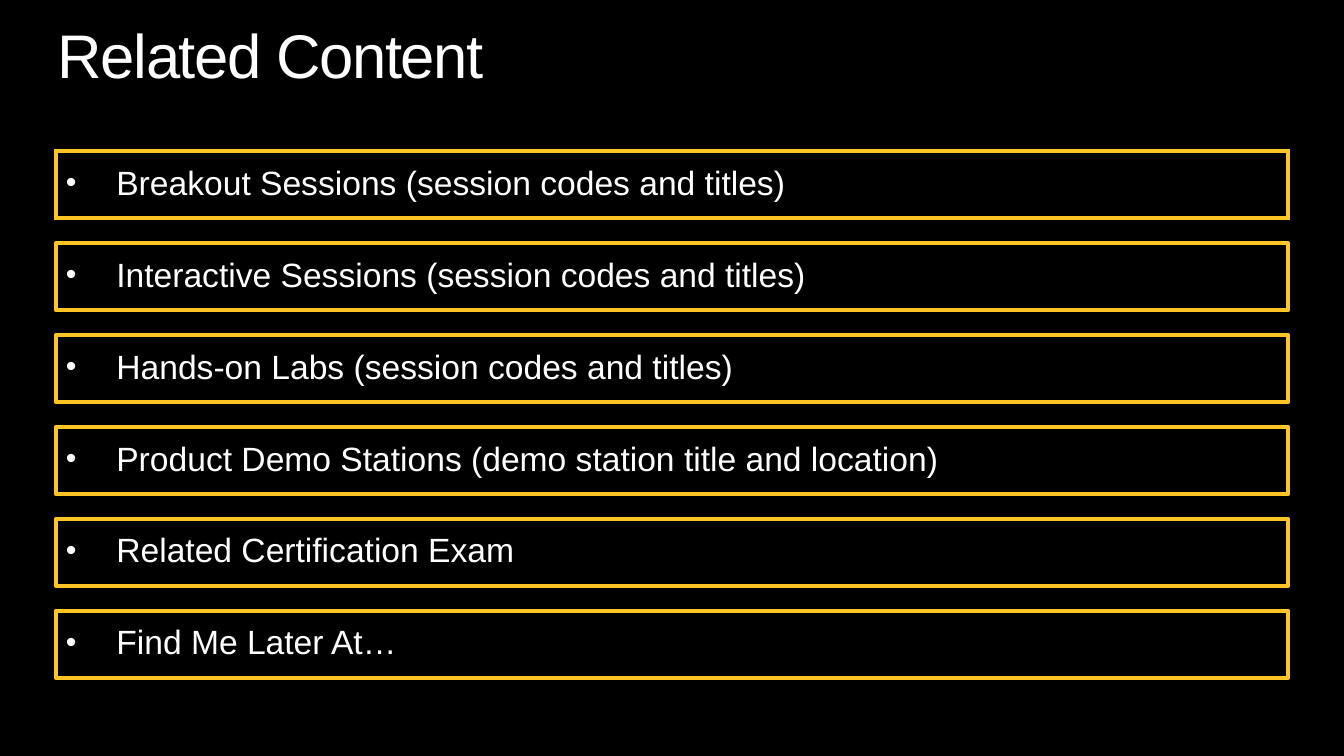
from lxml import etree
from pptx import Presentation
from pptx.dml.color import RGBColor
from pptx.enum.shapes import MSO_SHAPE
from pptx.enum.text import MSO_ANCHOR, PP_ALIGN
from pptx.oxml.ns import qn
from pptx.util import Inches, Pt

RECT = MSO_SHAPE.RECTANGLE
TOP = MSO_ANCHOR.TOP
LEFT = PP_ALIGN.LEFT
BLACK = RGBColor(0x00, 0x00, 0x00)
WHITE = RGBColor(0xFF, 0xFF, 0xFF)
GOLD = RGBColor(0xFF, 0xC4, 0x25)

COLS, ROWS = 24, 45
FIRST, PITCH = 9, 5.47
TOPICS = [
    "Breakout Sessions (session codes and titles)",
    "Interactive Sessions (session codes and titles)",
    "Hands-on Labs (session codes and titles)",
    "Product Demo Stations (demo station title and location)",
    "Related Certification Exam",
    "Find Me Later At…",
]


def assign(target, values):
    for name, value in values.items():
        setattr(target, name, value)


class Deck:
    font = {"name": "Arial"}
    color = WHITE

    def __init__(self):
        self.prs = Presentation()
        assign(self.prs, {"slide_width": Inches(13.33), "slide_height": Inches(7.5)})
        self.slide = self.prs.slides.add_slide(self.prs.slide_layouts[6])
        fill = self.slide.background.fill
        fill.solid()
        fill.fore_color.rgb = BLACK

    def place(self, col, row, wide, high):
        x = self.prs.slide_width / COLS
        y = self.prs.slide_height / ROWS
        return [round(n) for n in (col * x, row * y, wide * x, high * y)]

    def label(self, shape, text, size, side=0, edge=0, bullet=False):
        frame = shape.text_frame
        assign(frame, {
            "word_wrap": True, "vertical_anchor": TOP,
            "margin_left": Inches(side), "margin_right": Inches(side),
            "margin_top": Inches(edge), "margin_bottom": Inches(edge),
        })
        para = frame.paragraphs[0]
        assign(para, {"alignment": LEFT, "line_spacing": 0.9})
        if bullet:
            self.bullet(para)
        run = para.add_run()
        run.text = text
        assign(run.font, {**self.font, "size": Pt(size)})
        run.font.color.rgb = self.color
        return run

    def bullet(self, para):
        props = para._p.get_or_add_pPr()
        props.set("marL", str(Inches(0.5)))
        props.set("indent", str(Inches(-0.5)))
        for tag, key, value in (
            ("a:buSzPct", "val", "90000"),
            ("a:buFont", "typeface", "Arial"),
            ("a:buChar", "char", "•"),
        ):
            etree.SubElement(props, qn(tag)).set(key, value)

    def title(self, text, *spot):
        box = self.slide.shapes.add_textbox(*self.place(*spot))
        run = self.label(box, text, 44)
        run._r.get_or_add_rPr().set("spc", "-100")

    def panel(self, text, join, *spot):
        box = self.slide.shapes.add_shape(RECT, *self.place(*spot))
        box.shadow.inherit = False
        box.fill.background()
        box.line.color.rgb = GOLD
        box.line.width = Pt(3)
        etree.SubElement(box.line._get_or_add_ln(), qn(join))
        self.label(box, text, 24, 0.1, 0.15, True)


def main():
    deck = Deck()
    deck.title("Related Content", 1.03, 1.5, 22, 4)
    for i, topic in enumerate(TOPICS):
        join = "a:round" if i else "a:miter"
        deck.panel(topic, join, 1, FIRST + i * PITCH, 22, 4)
    deck.prs.save("out.pptx")


if __name__ == "__main__":
    main()
